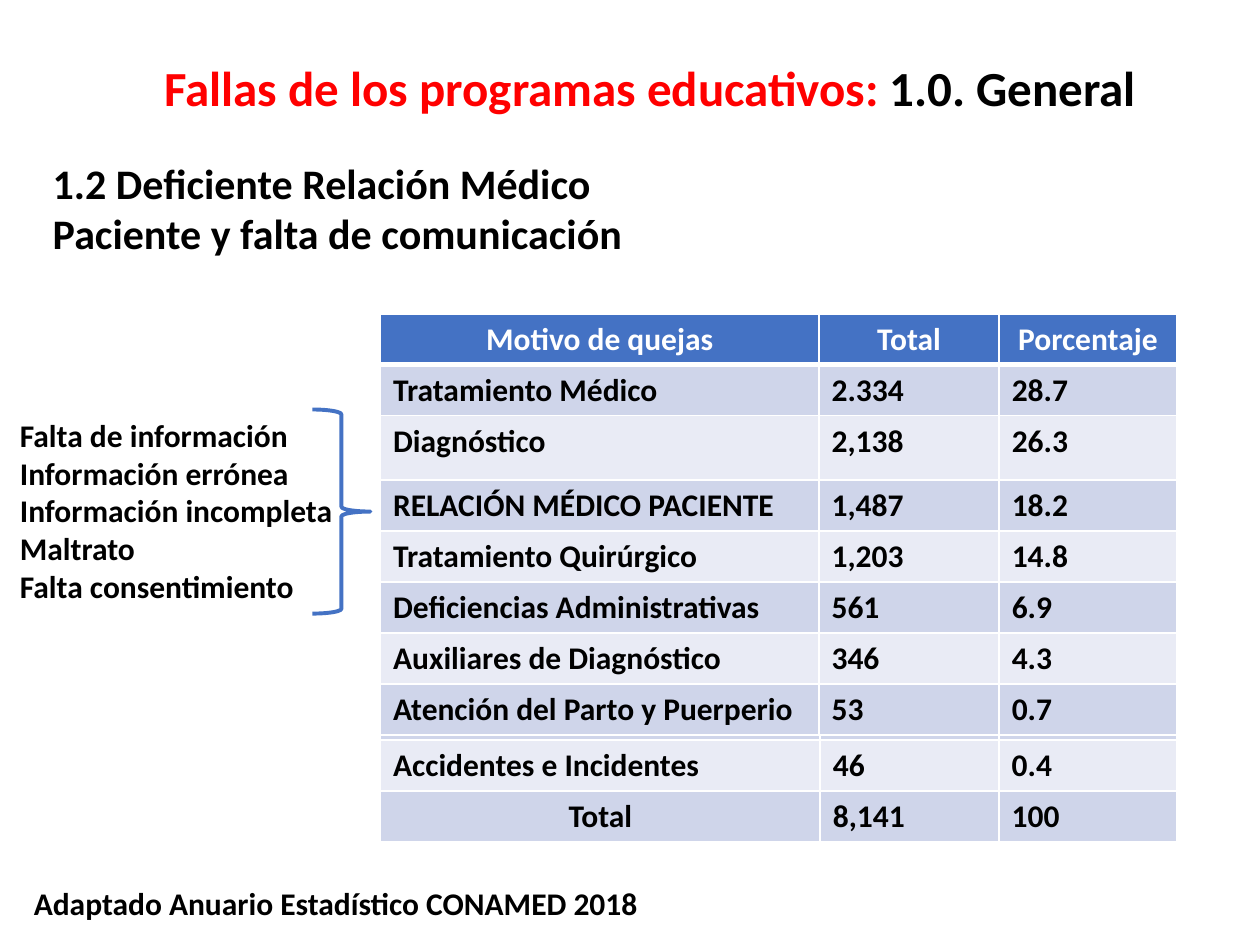
from dataclasses import dataclass

from lxml.etree import SubElement
from pptx import Presentation
from pptx.dml.color import RGBColor
from pptx.enum.shapes import MSO_SHAPE as Shape
from pptx.enum.text import MSO_ANCHOR as Anchor, MSO_AUTO_SIZE as AutoSize, PP_ALIGN as Align
from pptx.oxml.ns import qn
from pptx.util import Inches, Pt

FONT = "Calibri"
BLACK, WHITE, RED, BLUE = "000000", "FFFFFF", "FF0000", "4472C4"
BANDS = ("CFD5EA", "E9EBF5")
ROW_HEIGHT = 2.43 / 6
TALL_ROW_HEIGHT = 0.51
BLANK = ("", "", "")


@dataclass(frozen=True)
class Box:
    left: float
    top: float
    width: float
    height: float

    def lengths(self) -> tuple:
        return tuple(Inches(n) for n in (self.left, self.top, self.width, self.height))


@dataclass(frozen=True)
class Row:
    cells: tuple[str, str, str]
    height: float = ROW_HEIGHT
    centered: int = 0


def color(value: str) -> RGBColor:
    return RGBColor.from_string(value)


def write(paragraph, text: str, *, size: float = 18, fill: str = BLACK, align=Align.LEFT) -> None:
    paragraph.alignment = align
    run = paragraph.add_run()
    run.text = text
    run.font.name = FONT
    run.font.size = Pt(size)
    run.font.bold = True
    run.font.color.rgb = color(fill)


def add_text(slide, box: Box, lines: list[str], *, wrap: bool = False, **style) -> None:
    frame = slide.shapes.add_textbox(*box.lengths()).text_frame
    frame.word_wrap = wrap
    frame.auto_size = AutoSize.SHAPE_TO_FIT_TEXT
    for index, line in enumerate(lines):
        paragraph = frame.add_paragraph() if index else frame.paragraphs[0]
        write(paragraph, line, **style)


def add_title(slide, box: Box, parts: list[tuple[str, str]]) -> None:
    frame = slide.shapes.add_textbox(*box.lengths()).text_frame
    frame.word_wrap = True
    frame.vertical_anchor = Anchor.MIDDLE
    paragraph = frame.paragraphs[0]
    paragraph.line_spacing = 0.9
    for text, fill in parts:
        write(paragraph, text, size=28, fill=fill, align=Align.CENTER)


def set_borders(cell, *, top: float, bottom: float) -> None:
    properties = cell._tc.get_or_add_tcPr()
    for side, width in (("L", 1), ("R", 1), ("T", top), ("B", bottom)):
        line = SubElement(properties, qn(f"a:ln{side}"), w=str(Pt(width)))
        fill = SubElement(line, qn("a:solidFill"))
        SubElement(fill, qn("a:srgbClr"), val=WHITE)


def add_table(slide, left: float, top: float, widths: tuple, rows: list[Row]) -> None:
    box = Box(left, top, sum(widths), sum(row.height for row in rows))
    table = slide.shapes.add_table(len(rows), len(widths), *box.lengths()).table
    for column, width in zip(table.columns, widths):
        column.width = Inches(width)
    for row_index, row in enumerate(rows):
        table.rows[row_index].height = Inches(row.height)
        header = row_index == 0
        for column_index, text in enumerate(row.cells):
            cell = table.cell(row_index, column_index)
            set_borders(cell, top=3 if row_index == 1 else 1, bottom=3 if header else 1)
            cell.fill.solid()
            cell.fill.fore_color.rgb = color(BLUE if header else BANDS[(row_index - 1) % 2])
            if text:
                align = Align.CENTER if column_index < row.centered else Align.LEFT
                write(cell.text_frame.paragraphs[0], text,
                      fill=WHITE if header else BLACK, align=align)


def add_brace(slide, box: Box) -> None:
    brace = slide.shapes.add_shape(Shape.RIGHT_BRACE, *box.lengths())
    brace.shadow.inherit = False
    brace.fill.background()
    brace.line.color.rgb = color(BLUE)
    brace.line.width = Pt(2.25)


def main() -> None:
    presentation = Presentation()
    presentation.slide_width = Inches(10)
    presentation.slide_height = Inches(7.5)
    slide = presentation.slides.add_slide(presentation.slide_layouts[6])

    complaints = [
        Row(("Motivo de quejas", "Total", "Porcentaje"), centered=3),
        Row(("Tratamiento Médico", "2.334", "28.7")),
        Row(("Diagnóstico", "2,138", "26.3"), height=TALL_ROW_HEIGHT),
        Row(("RELACIÓN MÉDICO PACIENTE", "1,487", "18.2")),
        Row(("Tratamiento Quirúrgico", "1,203", "14.8")),
        Row(("Deficiencias Administrativas", "561", "6.9")),
        Row(("Auxiliares de Diagnóstico", "346", "4.3")),
        Row(("Atención del Parto y Puerperio", "53", "0.7")),
    ]
    closing = [Row(BLANK)] * 4 + [
        Row(("Accidentes e Incidentes", "46", "0.4")),
        Row(("Total", "8,141", "100"), centered=1),
    ]

    add_table(slide, 3.02, 4.25, (3.49, 1.42, 1.41), closing)
    add_title(slide, Box(0.85, -0.01, 8.62, 1.45), [
        ("Fallas de los programas educativos: ", RED),
        ("1.0. General", BLACK),
    ])
    add_text(slide, Box(0.32, 1.2, 4.75, 0.91),
             ["1.2 Deficiente Relación Médico Paciente y falta de comunicación"],
             wrap=True, size=24)
    add_table(slide, 3.02, 2.49, (3.48, 1.43, 1.41), complaints)
    add_text(slide, Box(0.06, 3.25, 2.7, 1.62), [
        "Falta de información",
        "Información errónea",
        "Información incompleta",
        "Maltrato",
        "Falta consentimiento",
    ])
    add_brace(slide, Box(2.48, 3.25, 0.46, 1.62))
    add_text(slide, Box(0.17, 6.97, 5.04, 0.4), ["Adaptado Anuario Estadístico CONAMED 2018"])

    presentation.save("out.pptx")


if __name__ == "__main__":
    main()
